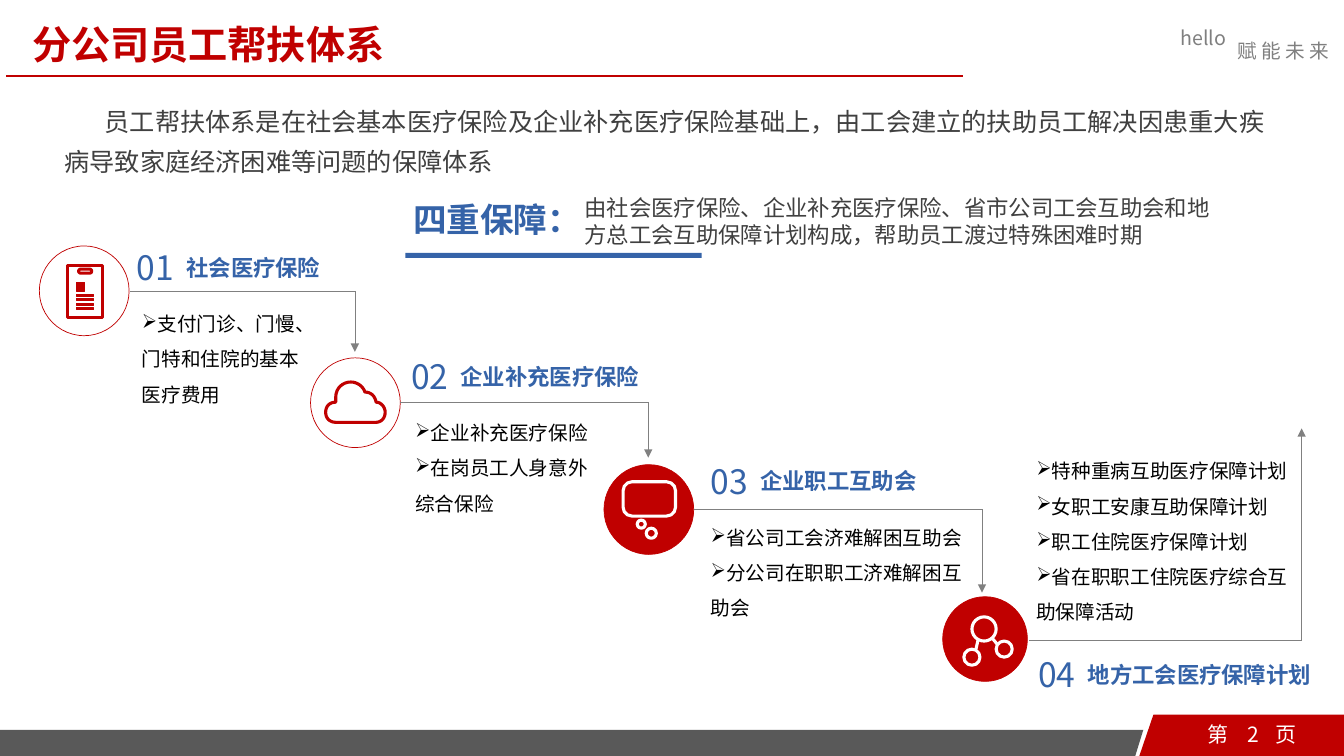
"""Build the slide on the four-layer employee support system."""
from dataclasses import dataclass

from lxml import etree
from pptx import Presentation
from pptx.dml.color import RGBColor
from pptx.enum.shapes import MSO_CONNECTOR as CONN, MSO_SHAPE as SHAPE
from pptx.enum.text import MSO_AUTO_SIZE as AUTO, PP_ALIGN as ALIGN
from pptx.oxml.ns import qn
from pptx.util import Inches, Pt

FONT = "Noto Sans CJK SC"
COLORS = {"red": "C00000", "blue": "3563A8", "dark": "404040", "black": "000000",
          "white": "FFFFFF", "gray": "808080", "mid": "7F7F7F", "bar": "595959"}
ICON_WIDTH = 2.2

Point = tuple[float, float]
Box = tuple[float, float, float, float]


@dataclass
class Step:
    number: str
    title: str
    title_width: float
    label: Point
    circle: Box
    filled: bool
    body: Box
    items: list[str]
    route: list[Point]


@dataclass
class Label:
    text: str
    box: Box
    size: float
    color: str
    bold: bool = False
    wrap: bool = True
    align: ALIGN = ALIGN.LEFT


STEPS = [
    Step("01", "社会医疗保险", 3.18, (1.26, 2.4), (0.39, 2.44, 0.89, 0.89), False,
         (1.31, 2.93, 1.86, 1.16), ["支付门诊、门慢、门特和住院的基本医疗费用"],
         [(1.29, 2.89), (3.52, 2.89), (3.52, 3.49)]),
    Step("02", "企业补充医疗保险", 2.04, (3.98, 3.48), (3.08, 3.55, 0.89, 0.89), False,
         (4.02, 4.01, 2.03, 1.16), ["企业补充医疗保险", "在岗员工人身意外综合保险"],
         [(3.97, 3.99), (6.43, 3.99), (6.43, 4.54)]),
    Step("03", "企业职工互助会", 1.91, (6.95, 4.52), (5.99, 4.61, 0.89, 0.89), True,
         (6.95, 5.05, 2.7, 1.12), ["省公司工会济难解困互助会", "分公司在职职工济难解困互助会"],
         [(6.88, 5.05), (9.74, 5.05), (9.74, 5.88)]),
    Step("04", "地方工会医疗保障计划", 2.64, (10.2, 6.44), (9.35, 5.92, 0.84, 0.84), True,
         (10.18, 4.39, 2.75, 1.87),
         ["特种重病互助医疗保障计划", "女职工安康互助保障计划", "职工住院医疗保障计划",
          "省在职职工住院医疗综合互助保障活动"],
         [(10.21, 6.35), (12.91, 6.35), (12.91, 4.25)]),
]

LABELS = [
    Label("2", (12.18, 7.11, 0.5, 0.37), 15, "white", wrap=False, align=ALIGN.CENTER),
    Label("hello", (11.61, 0.21, 0.66, 0.34), 14, "mid", wrap=False),
    Label("分公司员工帮扶体系", (0.22, 0.15, 9.47, 0.57), 28, "red", bold=True),
    Label("四重保障：", (2.45, 1.92, 4.96, 0.5), 24, "blue", bold=True, align=ALIGN.CENTER),
    Label("由社会医疗保险、企业补充医疗保险、省市公司工会互助会和地方总工会互助保障计划构成，帮助员工渡过特殊困难时期",
          (5.7, 1.88, 6.58, 0.64), 16, "dark"),
]

CLOUD_START = (3.33, 4.19)
CLOUD_CURVES = [
    ((3.27, 4.19), (3.23, 4.15), (3.23, 4.09)), ((3.23, 4.03), (3.27, 3.99), (3.33, 3.99)),
    ((3.33, 3.98), (3.33, 3.96), (3.33, 3.94)), ((3.33, 3.85), (3.4, 3.79), (3.48, 3.79)),
    ((3.54, 3.79), (3.6, 3.83), (3.62, 3.89)), ((3.68, 3.89), (3.72, 3.93), (3.73, 3.99)),
    ((3.78, 3.99), (3.82, 4.04), (3.82, 4.09)), ((3.82, 4.15), (3.78, 4.19), (3.73, 4.19)),
]


def rgb(name: str) -> RGBColor:
    return RGBColor.from_string(COLORS[name])


def paint(sp, fill: str | None, line: str | None = None, width: float = 0.5):
    sp.shadow.inherit = False
    if fill:
        sp.fill.solid()
        sp.fill.fore_color.rgb = rgb(fill)
    else:
        sp.fill.background()
    if line:
        sp.line.color.rgb = rgb(line)
        sp.line.width = Pt(width)
    else:
        sp.line.fill.background()


def add_preset(shapes, kind: SHAPE, box: Box, fill: str | None,
               line: str | None = None, width: float = 0.5):
    sp = shapes.add_shape(kind, *map(Inches, box))
    paint(sp, fill, line, width)
    return sp


def add_outline(shapes, points: list[Point], fill: str | None,
                line: str | None = None, width: float = 0.5):
    first, *rest = [(Inches(x), Inches(y)) for x, y in points]
    fb = shapes.build_freeform(*first, scale=1.0)
    fb.add_line_segments(rest, close=True)
    paint(fb.convert_to_shape(), fill, line, width)


def add_line(shapes, start: Point, end: Point, color: str, width: float, arrow: bool = False):
    cx = shapes.add_connector(CONN.STRAIGHT, *map(Inches, start + end))
    cx.line.color.rgb = rgb(color)
    cx.line.width = Pt(width)
    if arrow:
        etree.SubElement(cx.line._get_or_add_ln(), qn("a:tailEnd"), type="triangle")
    etree.SubElement(cx._element.spPr, qn("a:effectLst"))


def style_runs(p, size: float, color: str, bold: bool = False):
    for r in p.runs:
        r.font.size, r.font.bold, r.font.name = Pt(size), bold, FONT
        r.font.color.rgb = rgb(color)
        etree.SubElement(r._r.get_or_add_rPr(), qn("a:ea"), typeface=FONT)


def add_label(shapes, label: Label):
    tb = shapes.add_textbox(*map(Inches, label.box))
    tf = tb.text_frame
    tf.word_wrap = label.wrap
    tf.auto_size = AUTO.SHAPE_TO_FIT_TEXT
    p = tf.paragraphs[0]
    p.text = label.text
    p.alignment = label.align
    style_runs(p, label.size, label.color, label.bold)
    return tf


def add_items(shapes, step: Step):
    tf = add_label(shapes, Label(step.items[0], step.body, 14, "black"))
    for item in step.items[1:]:
        p = tf.add_paragraph()
        p.text = item
        style_runs(p, 14, "black")
    for p in tf.paragraphs:
        p.line_spacing = 1.5
        pPr = p._p.get_or_add_pPr()
        pPr.set("marL", "0")
        pPr.set("indent", "0")
        etree.SubElement(pPr, qn("a:buChar"), char="➢")


def add_step(shapes, step: Step):
    add_preset(shapes, SHAPE.OVAL, step.circle, "red" if step.filled else None, "red")
    start, corner, end = step.route
    add_line(shapes, start, corner, "gray", 0.5)
    add_line(shapes, corner, end, "gray", 0.5, arrow=True)
    x, y = step.label
    add_label(shapes, Label(step.number, (x, y, 0.58, 0.5), 24, "blue", wrap=False))
    add_label(shapes, Label(step.title, (x + 0.49, y + 0.07, step.title_width, 0.37),
                            16, "blue", bold=True))
    add_items(shapes, step)


def add_document_icon(shapes):
    add_preset(shapes, SHAPE.RECTANGLE, (0.67, 2.63, 0.35, 0.52), None, "red", ICON_WIDTH)
    clip = add_preset(shapes, SHAPE.ROUNDED_RECTANGLE, (0.78, 2.67, 0.13, 0.04),
                      None, "red", ICON_WIDTH)
    clip.adjustments[0] = 0.5
    add_preset(shapes, SHAPE.RECTANGLE, (0.76, 2.8, 0.08, 0.09), "red", "red", 0.75)
    for row in range(4):
        add_preset(shapes, SHAPE.RECTANGLE, (0.76, 2.92 + row * 0.045, 0.17, 0.02),
                   "red", "red", 0.75)


def add_cloud_icon(shapes, steps: int = 8):
    points = [CLOUD_START]
    for b, c, d in CLOUD_CURVES:
        a = points[-1]
        for t in (i / steps for i in range(1, steps + 1)):
            weights = ((1 - t) ** 3, 3 * t * (1 - t) ** 2, 3 * t * t * (1 - t), t ** 3)
            points.append(tuple(sum(w * q[k] for w, q in zip(weights, (a, b, c, d)))
                                for k in (0, 1)))
    add_outline(shapes, points, None, "red", ICON_WIDTH)


def add_rings(shapes, rings: list[tuple[float, float, float]]):
    for x, y, radius in rings:
        add_preset(shapes, SHAPE.OVAL, (x - radius, y - radius, 2 * radius, 2 * radius),
                   None, "white", ICON_WIDTH)


def main():
    prs = Presentation()
    prs.slide_width, prs.slide_height = Inches(13.33), Inches(7.5)
    shapes = prs.slides.add_slide(prs.slide_layouts[6]).shapes
    add_outline(shapes, [(0, 7.5), (11.26, 7.5), (11.34, 7.24), (0, 7.24)], "bar")
    add_outline(shapes, [(11.44, 7.09), (11.3, 7.5), (13.33, 7.5), (13.33, 7.09)], "red")
    add_line(shapes, (0.06, 0.75), (9.55, 0.75), "red", 1.5)
    add_preset(shapes, SHAPE.RECTANGLE, (4.02, 2.51, 2.94, 0.05), "blue")
    for label in LABELS:
        add_label(shapes, label)

    tf = add_label(shapes, Label("第\t页", (11.98, 7.16, 1.06, 0.25), 15, "white"))
    tf.margin_left = tf.margin_right = tf.margin_top = tf.margin_bottom = 0
    tabs = etree.SubElement(tf.paragraphs[0]._p.get_or_add_pPr(), qn("a:tabLst"))
    etree.SubElement(tabs, qn("a:tab"), pos=str(Inches(0.67)), algn="l")

    tf = add_label(shapes, Label("赋能未来", (12.18, 0.34, 1.16, 0.34), 14, "gray", wrap=False))
    tf.paragraphs[0].runs[0]._r.get_or_add_rPr().set("spc", "300")

    tf = add_label(shapes, Label(
        "员工帮扶体系是在社会基本医疗保险及企业补充医疗保险基础上，由工会建立的扶助员工解决因患重大疾病导致家庭经济困难等问题的保障体系",
        (0.54, 0.92, 12.19, 0.85), 18, "dark"))
    tf.auto_size = AUTO.NONE
    tf.paragraphs[0].line_spacing = 1.3
    tf.paragraphs[0]._p.get_or_add_pPr().set("indent", str(Inches(0.4)))

    for step in STEPS:
        add_step(shapes, step)
    add_document_icon(shapes)
    add_cloud_icon(shapes)
    add_preset(shapes, SHAPE.ROUNDED_RECTANGLE, (6.18, 4.78, 0.52, 0.34),
               None, "white", ICON_WIDTH).adjustments[0] = 0.26
    add_rings(shapes, [(6.36, 5.2, 0.04), (6.46, 5.29, 0.05)])
    add_rings(shapes, [(9.76, 6.24, 0.12), (9.64, 6.52, 0.08), (9.96, 6.44, 0.08)])
    add_line(shapes, (9.7, 6.35), (9.68, 6.44), "white", ICON_WIDTH)
    add_line(shapes, (9.84, 6.33), (9.89, 6.39), "white", ICON_WIDTH)
    prs.save("out.pptx")


if __name__ == "__main__":
    main()
